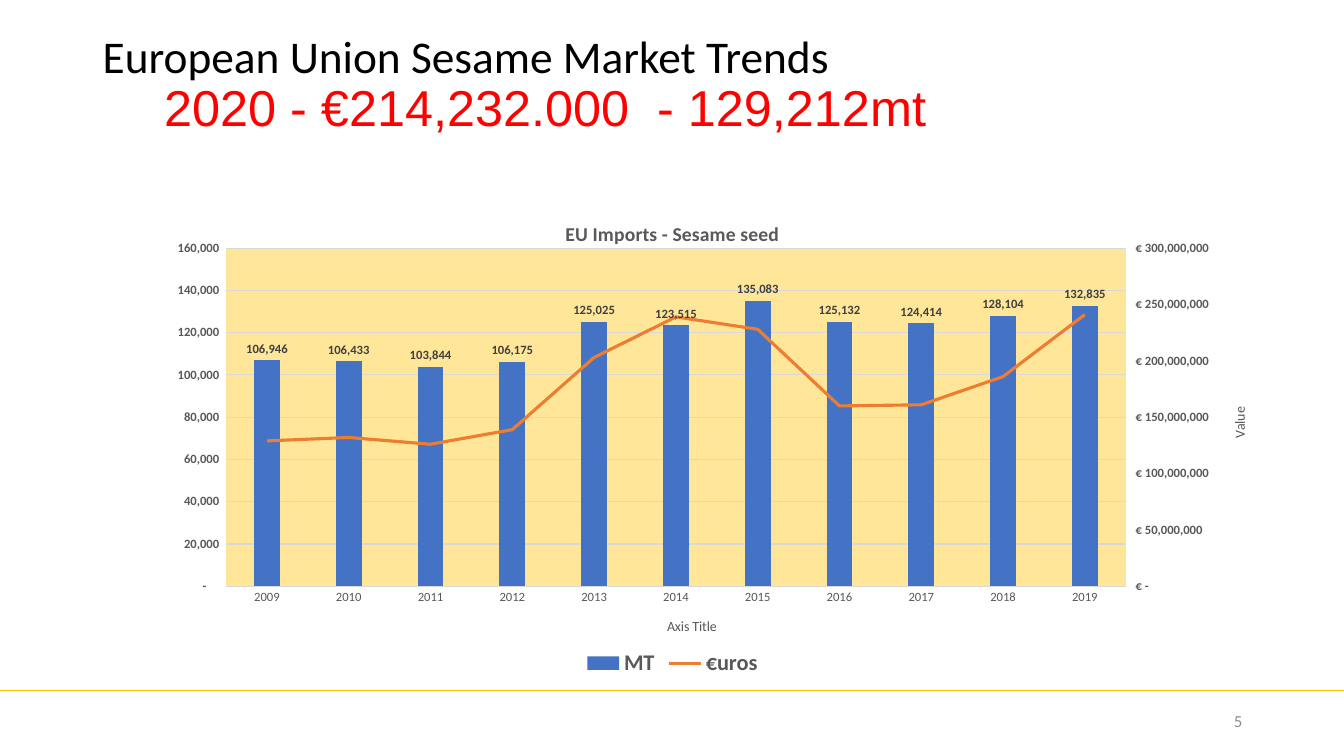
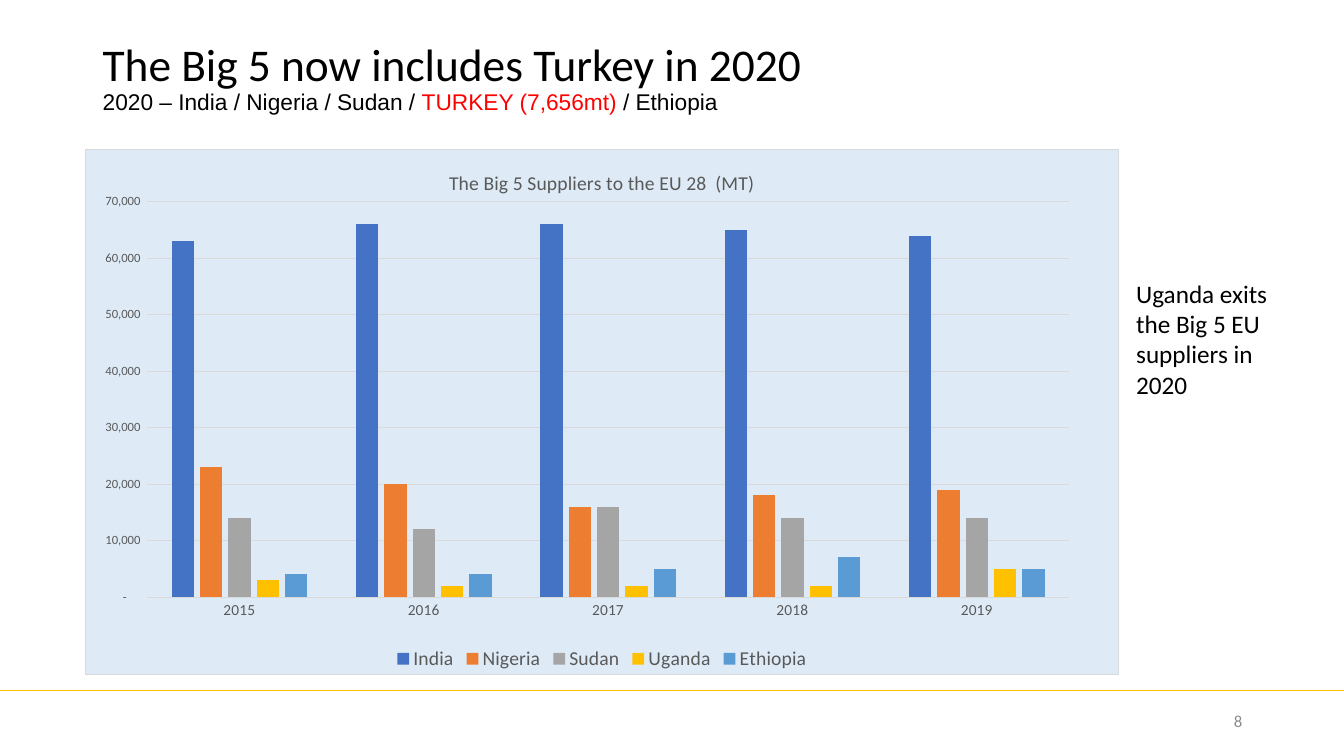
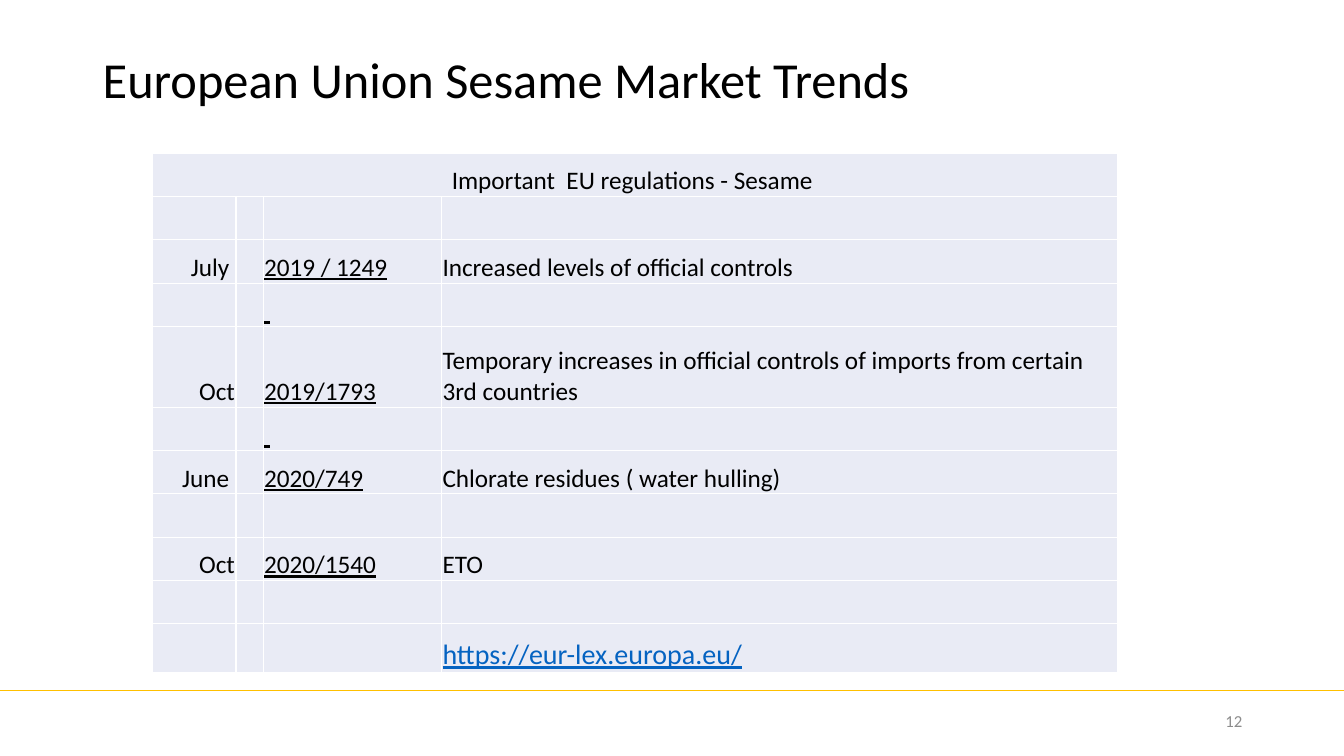
from copy import deepcopy

from lxml import etree
from pptx import Presentation
from pptx import util as u
from pptx.chart import axis as chart_axis
from pptx.chart.data import CategoryChartData
from pptx.dml.color import RGBColor
from pptx.enum import chart as ch
from pptx.enum import shapes, text
from pptx.oxml import parse_xml
from pptx.oxml.ns import nsdecls, qn

WIDTH, HEIGHT = 13.33, 7.5
LEFT = 0.92
BLACK, RED, GOLD, WHITE = "000000", "FF0000", "FFC000", "FFFFFF"
GREY, PALE_GREY, NUMBER_GREY, LABEL_GREY = "595959", "D9D9D9", "8C8C8C", "404040"
BLUE, ORANGE, SILVER, SKY = "4472C4", "ED7D31", "A5A5A5", "5B9BD5"
CELL_FILL, LINK = "E9EBF5", "0563C1"
ACCOUNTING = r'_-* #,##0_-;\-* #,##0_-;_-* "-"??_-;_-@_-'
EUROS = '"€ "#,##0;"€ "-#,##0;"€ -"'

TRENDS = "European Union Sesame Market Trends"
TREND_TITLE = [
    {"runs": [(TRENDS, BLACK)], "size": 32.4},
    {"runs": [("2020 - €214,232.000  - 129,212mt", RED)], "size": 36,
     "font": "Arial", "indent": 0.61},
]
SUPPLIER_TITLE = [
    {"runs": [("The Big 5 now includes Turkey in 2020", BLACK)], "size": 32.4},
    {"runs": [("2020 – India / Nigeria / Sudan / ", BLACK),
              ("TURKEY (7,656mt) ", RED), ("/ Ethiopia", BLACK)],
     "size": 16.2, "font": "Arial"},
]
REGULATION_TITLE = [{"runs": [(TRENDS, BLACK)], "size": 36}]
UGANDA_NOTE = "Uganda exits the Big 5 EU  suppliers in 2020"

IMPORTS = {
    "title": "EU Imports - Sesame seed", "bold": True,
    "box": (LEFT, 2, 11.5, 4.76), "plot": (0.115, 0.097, 0.776, 0.705),
    "years": range(2009, 2020), "year_size": 9, "legend_size": 16,
    "scale": (160000, 20000), "plot_fill": "FFE699",
    "series": [
        ("MT", BLUE, [106946, 106433, 103844, 106175, 125025, 123515,
                      135083, 125132, 124414, 128104, 132835]),
        ("€uros", ORANGE, [value * 1000000 for value in (
            129, 132, 126, 139, 203, 239, 228, 160, 161, 186, 241)]),
    ],
}
SUPPLIERS = {
    "title": "The Big 5 Suppliers to the EU 28  (MT)", "bold": False,
    "box": (0.84, 1.48, 10.26, 5.22), "plot": (0.06, 0.099, 0.892, 0.753),
    "years": range(2015, 2020), "year_size": 11, "legend_size": 14,
    "scale": (70000, 10000), "chart_fill": "DEEBF7",
    "series": [
        ("India", BLUE, [63000, 66000, 66000, 65000, 64000]),
        ("Nigeria", ORANGE, [23000, 20000, 16000, 18000, 19000]),
        ("Sudan", SILVER, [14000, 12000, 16000, 14000, 14000]),
        ("Uganda", GOLD, [3000, 2000, 2000, 2000, 5000]),
        ("Ethiopia", SKY, [4000, 4000, 5000, 7000, 5000]),
    ],
}

BLANK_ROW = ("", "", "", "")
REGULATIONS = [
    ("Important  EU regulations - Sesame ", "", "", ""),
    BLANK_ROW,
    ("July ", "", "2019 / 1249", "Increased levels of official controls"),
    ("", "", " ", ""),
    ("Oct", "", "2019/1793",
     "Temporary increases in official controls of imports from certain 3rd countries"),
    ("", "", " ", ""),
    ("June ", "", "2020/749", "Chlorate residues ( water hulling)"),
    BLANK_ROW,
    ("Oct", "", "2020/1540", "ETO"),
    BLANK_ROW,
    ("", "", "", "https://eur-lex.europa.eu/"),
]
COLUMN_WIDTHS = (0.83, 0.27, 1.77, 6.71)
ROW_HEIGHT, TALL_ROWS = 0.43, {4: 0.8, 10: 0.48}


def rgb(value):
    return RGBColor.from_string(value)


def inches(*lengths):
    return [u.Inches(length) for length in lengths]


def set_font(font, size, color=None, bold=False, name="Calibri"):
    font.name, font.size, font.bold = name, u.Pt(size), bold
    if color:
        font.color.rgb = rgb(color)


def add_text(slide, box, paragraphs, anchor=text.MSO_ANCHOR.TOP,
             align=text.PP_ALIGN.LEFT, spacing=1.0):
    frame = slide.shapes.add_textbox(*inches(*box)).text_frame
    frame.word_wrap = True
    frame.vertical_anchor = anchor
    for index, content in enumerate(paragraphs):
        line = frame.add_paragraph() if index else frame.paragraphs[0]
        line.alignment, line.line_spacing = align, spacing
        if "indent" in content:
            line._p.get_or_add_pPr().set("marL", str(u.Inches(content["indent"])))
        set_font(line.font, content["size"], name=content.get("font", "Calibri"))
        for words, color in content["runs"]:
            run = line.add_run()
            run.text = words
            run.font.color.rgb = rgb(color)


def start_slide(deck, title, title_top, number):
    slide = deck.slides.add_slide(deck.slide_layouts[6])
    rule = slide.shapes.add_connector(
        shapes.MSO_CONNECTOR.STRAIGHT, *inches(0, 6.85, WIDTH, 6.85))
    rule.line.color.rgb, rule.line.width = rgb(GOLD), u.Pt(0.5)
    etree.SubElement(rule._element.spPr, qn("a:effectLst"))
    add_text(slide, (LEFT, title_top, 8.94, 1.1), title, spacing=0.9)
    add_text(slide, (9.42, 6.95, 3, 0.4),
             [{"runs": [(str(number), NUMBER_GREY)], "size": 12}],
             text.MSO_ANCHOR.MIDDLE, text.PP_ALIGN.RIGHT)
    return slide


def area_format(fill, border=None):
    line = (f'<a:ln w="9525"><a:solidFill><a:srgbClr val="{border}"/></a:solidFill></a:ln>'
            if border else "<a:ln><a:noFill/></a:ln>")
    return parse_xml(f'<c:spPr {nsdecls("c", "a")}><a:solidFill>'
                     f'<a:srgbClr val="{fill}"/></a:solidFill>{line}</c:spPr>')


def place_plot(plot_area, shares):
    for old in plot_area.findall(qn("c:layout")):
        plot_area.remove(old)
    places = "".join(f'<c:{key} val="{share}"/>' for key, share in zip("xywh", shares))
    plot_area.insert(0, parse_xml(
        f'<c:layout {nsdecls("c")}><c:manualLayout><c:layoutTarget val="inner"/>'
        f'<c:xMode val="edge"/><c:yMode val="edge"/>{places}</c:manualLayout></c:layout>'))


def set_title(owner, words, size, bold=False):
    title = owner.chart_title if hasattr(owner, "chart_title") else owner.axis_title
    title.text_frame.text = words
    set_font(title.text_frame.paragraphs[0].font, size, GREY, bold)


def set_scale(values, maximum, step, number_format):
    values.minimum_scale, values.maximum_scale, values.major_unit = 0, maximum, step
    values.tick_labels.number_format = number_format
    values.tick_labels.number_format_is_linked = False


def add_columns(slide, content):
    data = CategoryChartData()
    data.categories = [str(year) for year in content["years"]]
    for name, _, values in content["series"]:
        data.add_series(name, values)
    chart = slide.shapes.add_chart(
        ch.XL_CHART_TYPE.COLUMN_CLUSTERED, *inches(*content["box"]), data).chart
    set_font(chart.font, 10, BLACK)
    chart.has_title = True
    set_title(chart, content["title"], 14, content["bold"])
    chart.has_legend = True
    chart.legend.position = ch.XL_LEGEND_POSITION.BOTTOM
    chart.legend.include_in_layout = False
    set_font(chart.legend.font, content["legend_size"], GREY, content["bold"])

    years, amounts = chart.category_axis, chart.value_axis
    years.major_tick_mark = amounts.major_tick_mark = ch.XL_TICK_MARK.NONE
    set_font(years.tick_labels.font, content["year_size"], GREY)
    set_font(amounts.tick_labels.font, 9, GREY, content["bold"])
    amounts.format.line.fill.background()
    set_scale(amounts, *content["scale"], ACCOUNTING)
    for line in (years.format.line, amounts.major_gridlines.format.line):
        line.color.rgb, line.width = rgb(PALE_GREY), u.Pt(0.75)

    columns = chart.plots[0]
    columns.gap_width, columns.overlap = 219, -27
    columns.vary_by_categories = False
    for series, (_, color, _) in zip(columns.series, content["series"]):
        series.format.fill.solid()
        series.format.fill.fore_color.rgb = rgb(color)
    frame = chart.element.find(qn("c:chart"))
    plot_area = frame.find(qn("c:plotArea"))
    place_plot(plot_area, content["plot"])
    if "plot_fill" in content:
        plot_area.append(area_format(content["plot_fill"]))
    if "chart_fill" in content:
        frame.addnext(area_format(content["chart_fill"], PALE_GREY))
    return chart


def move_euros_to_right_axis(chart):
    years, amounts = chart.category_axis._element, chart.value_axis._element
    bars = chart.plots[0]._element
    euros = bars.findall(qn("c:ser"))[1]
    for tag in ("c:invertIfNegative", "c:spPr"):
        for part in euros.findall(qn(tag)):
            euros.remove(part)
    line_plot = parse_xml(
        f'<c:lineChart {nsdecls("c")}><c:grouping val="standard"/><c:varyColors val="0"/>'
        '<c:marker val="1"/><c:axId val="50010"/><c:axId val="50020"/></c:lineChart>')
    line_plot.insert(2, euros)
    bars.addnext(line_plot)

    right, hidden = deepcopy(amounts), deepcopy(years)
    for element, own, other in ((right, "50020", "50010"), (hidden, "50010", "50020")):
        element.find(qn("c:axId")).set("val", own)
        element.find(qn("c:crossAx")).set("val", other)
    right.find(qn("c:axPos")).set("val", "r")
    right.find(qn("c:crosses")).set("val", "max")
    amounts.addnext(right)
    right.addnext(hidden)
    chart_axis.CategoryAxis(hidden).visible = False
    values = chart_axis.ValueAxis(right)
    values.has_major_gridlines = False
    values.major_tick_mark = ch.XL_TICK_MARK.OUTSIDE
    set_scale(values, 300000000, 50000000, EUROS)

    trend = chart.plots[1].series[0]
    trend.smooth = False
    trend.marker.style = ch.XL_MARKER_STYLE.NONE
    trend.format.line.color.rgb, trend.format.line.width = rgb(ORANGE), u.Pt(2.25)
    for axis, words in ((chart.category_axis, "Axis Title"),
                        (chart.value_axis, "Mt"), (values, "Value")):
        set_title(axis, words, 10)


def label_columns(chart):
    labels = chart.plots[0].series[0].data_labels
    labels.show_value = True
    labels.position = ch.XL_LABEL_POSITION.OUTSIDE_END
    labels.number_format, labels.number_format_is_linked = ACCOUNTING, False
    set_font(labels.font, 9, LABEL_GREY, True)


def style_cell(cell, words, row, column):
    cell.margin_left = cell.margin_right = cell.margin_top = u.Inches(0.01)
    cell.margin_bottom = 0
    cell.vertical_anchor = text.MSO_ANCHOR.BOTTOM
    properties = cell._tc.get_or_add_tcPr()
    for side in ("lnL", "lnR", "lnT", "lnB"):
        properties.append(parse_xml(
            f'<a:{side} {nsdecls("a")} w="12700"><a:solidFill>'
            f'<a:srgbClr val="{WHITE}"/></a:solidFill></a:{side}>'))
    cell.fill.solid()
    cell.fill.fore_color.rgb = rgb(CELL_FILL)
    if words:
        is_link = words.startswith("https")
        cell.text = words
        line = cell.text_frame.paragraphs[0]
        if column == 0:
            line.alignment = text.PP_ALIGN.RIGHT if row else text.PP_ALIGN.CENTER
        set_font(line.font, 20 if is_link else 18, LINK if is_link else BLACK)
        line.font.underline = is_link or column == 2


def add_regulations(slide):
    heights = [TALL_ROWS.get(row, ROW_HEIGHT) for row in range(len(REGULATIONS))]
    table = slide.shapes.add_table(
        len(heights), len(COLUMN_WIDTHS),
        *inches(1.51, 1.52, sum(COLUMN_WIDTHS), sum(heights))).table
    table.first_row = table.horz_banding = False
    for column, width in zip(table.columns, COLUMN_WIDTHS):
        column.width = u.Inches(width)
    for row, (height, entries) in enumerate(zip(heights, REGULATIONS)):
        table.rows[row].height = u.Inches(height)
        for column, words in enumerate(entries):
            style_cell(table.cell(row, column), words, row, column)
    table.cell(0, 0).merge(table.cell(0, len(COLUMN_WIDTHS) - 1))


def main():
    deck = Presentation()
    deck.slide_width, deck.slide_height = inches(WIDTH, HEIGHT)

    imports = add_columns(start_slide(deck, TREND_TITLE, 0.29, 5), IMPORTS)
    move_euros_to_right_axis(imports)
    label_columns(imports)

    suppliers = start_slide(deck, SUPPLIER_TITLE, 0.37, 8)
    add_columns(suppliers, SUPPLIERS)
    add_text(suppliers, (11.17, 2.71, 1.89, 1.62),
             [{"runs": [(UGANDA_NOTE, BLACK)], "size": 18}])

    add_regulations(start_slide(deck, REGULATION_TITLE, 0.5, 12))
    deck.save("out.pptx")


if __name__ == "__main__":
    main()
